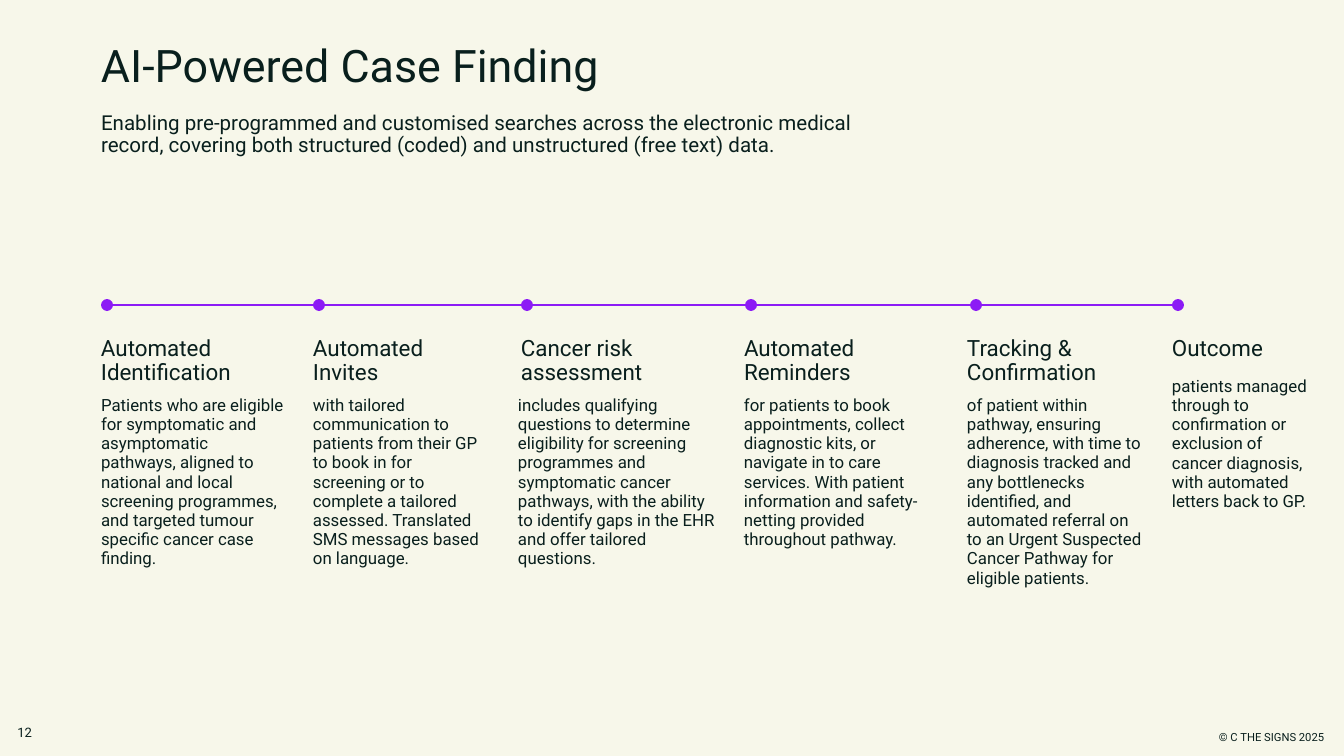
from lxml.etree import SubElement
from pptx import Presentation
from pptx.dml.color import RGBColor
from pptx.enum.shapes import MSO_CONNECTOR, MSO_SHAPE
from pptx.enum.text import MSO_ANCHOR as Anchor, PP_ALIGN as Align
from pptx.oxml.ns import qn
from pptx.util import Emu, Pt

CREAM = RGBColor(0xF7, 0xF7, 0xEA)
INK = RGBColor(0x09, 0x1F, 0x1D)
PURPLE = RGBColor(0x8C, 0x1B, 0xF5)
FONT = "Roboto"

TITLE = "AI-Powered Case Finding"
SUBTITLE = ("Enabling pre-programmed and customised searches across the electronic medical "
            "record, covering both structured (coded) and unstructured (free text) data.")
COPYRIGHT = "© C THE SIGNS 2025"
PAGE_NUMBER = "12"

# dot left, heading, heading (left, width), description, description (left, top, width)
STEPS = [
    (101, "Automated Identification", (101, 156),
     "Patients who are eligible for symptomatic and asymptomatic pathways, aligned to "
     "national and local screening programmes, and targeted tumour specific cancer case "
     "finding.", (101, 396, 184)),
    (313, "Automated Invites", (313, 163),
     "with tailored communication to patients from their GP to book in for screening or to "
     "complete a tailored assessed. Translated SMS messages based on language.",
     (313, 396, 176)),
    (521, "Cancer risk assessment", (521, 194),
     "includes qualifying questions to determine eligibility for screening programmes and "
     "symptomatic cancer pathways, with the ability to identify gaps in the EHR and offer "
     "tailored questions.", (518, 396, 198)),
    (745, "Automated Reminders", (744, 184),
     "for patients to book appointments, collect diagnostic kits, or navigate in to care "
     "services. With patient information and safety-netting provided throughout pathway.",
     (744, 396, 194)),
    (970, "Tracking & Confirmation", (967, 184),
     "of patient within pathway, ensuring adherence, with time to diagnosis tracked and any "
     "bottlenecks identified, and automated referral on to an Urgent Suspected Cancer "
     "Pathway for eligible patients.", (967, 396, 176)),
    (1172, "Outcome", (1172, 172),
     "patients managed through to confirmation or exclusion of cancer diagnosis, with "
     "automated letters back to GP.", (1172, 377, 142)),
]
DOT_SIZE = 12
LINE_Y = 305
HEADING_TOP, HEADING_HEIGHT = 337, 66
DESCRIPTION_HEIGHT = 167


def px(value):
    return Emu(round(value * 914400 / 134.4))


def set_text(shape, text, size, spacing=1.0, align=Align.LEFT, anchor=Anchor.TOP):
    frame = shape.text_frame
    layout = {"word_wrap": True, "vertical_anchor": anchor, "margin_left": 0,
              "margin_top": 0, "margin_right": 0, "margin_bottom": 0}
    for name, value in layout.items():
        setattr(frame, name, value)
    paragraph = frame.paragraphs[0]
    paragraph.text = text
    paragraph.alignment = align
    paragraph.line_spacing = spacing
    for name, value in {"name": FONT, "size": Pt(size)}.items():
        setattr(paragraph.font, name, value)
    paragraph.font.color.rgb = INK


def add_text(slide, box, text, size, **layout):
    shape = slide.shapes.add_textbox(*map(px, box))
    set_text(shape, text, size, **layout)


def add_timeline(slide):
    start, end = STEPS[0][0] + DOT_SIZE / 2, STEPS[-1][0] + DOT_SIZE / 2
    line = slide.shapes.add_connector(
        MSO_CONNECTOR.STRAIGHT, px(start), px(LINE_Y), px(end), px(LINE_Y))
    line.line.color.rgb = PURPLE
    line.line.width = Pt(0.75)
    SubElement(line._element.spPr, qn("a:effectLst"))
    for left, *_ in STEPS:
        dot = slide.shapes.add_shape(
            MSO_SHAPE.OVAL, px(left), px(LINE_Y - DOT_SIZE / 2), px(DOT_SIZE), px(DOT_SIZE))
        dot.shadow.inherit = False
        dot.fill.solid()
        dot.fill.fore_color.rgb = PURPLE
        dot.line.fill.background()


def main():
    presentation = Presentation()
    presentation.slide_width, presentation.slide_height = px(1344), px(756)
    slide = presentation.slides.add_slide(presentation.slide_layouts[6])
    slide.background.fill.solid()
    slide.background.fill.fore_color.rgb = CREAM

    add_text(slide, (101, 48, 1142, 54), TITLE, 24, spacing=0.8)
    add_text(slide, (101, 113, 767, 46), SUBTITLE, 11, spacing=0.9)
    add_timeline(slide)
    for _, heading, (left, width), description, (text_left, text_top, text_width) in STEPS:
        add_text(slide, (left, HEADING_TOP, width, HEADING_HEIGHT), heading, 12, spacing=0.9)
        add_text(slide, (text_left, text_top, text_width, DESCRIPTION_HEIGHT),
                 description, 9, spacing=0.95)
    add_text(slide, (13, 722, 19, 21), PAGE_NUMBER, 7,
             align=Align.RIGHT, anchor=Anchor.MIDDLE)
    add_text(slide, (993, 730, 331, 13), COPYRIGHT, 6, align=Align.RIGHT)
    presentation.save("out.pptx")


if __name__ == "__main__":
    main()
